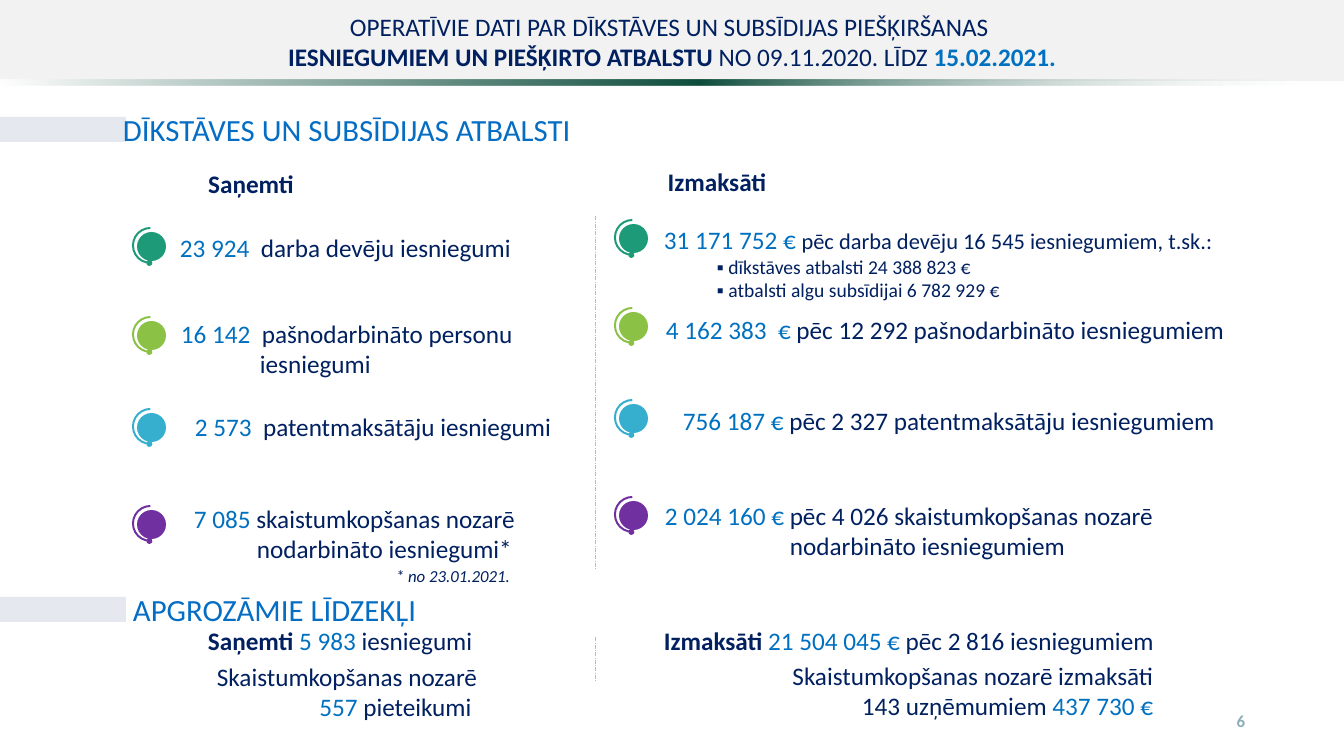
from lxml import etree
from pptx import Presentation
from pptx.dml.color import RGBColor
from pptx.enum.dml import MSO_LINE
from pptx.enum.shapes import MSO_CONNECTOR, MSO_SHAPE
from pptx.enum.text import MSO_ANCHOR, PP_ALIGN
from pptx.oxml import parse_xml
from pptx.oxml.ns import qn
from pptx.util import Pt

RECT, WAVE, ARC, OVAL = MSO_SHAPE.RECTANGLE, MSO_SHAPE.WAVE, MSO_SHAPE.ARC, MSO_SHAPE.OVAL
LEFT, MID, RIGHT = PP_ALIGN.LEFT, PP_ALIGN.CENTER, PP_ALIGN.RIGHT
STRAIGHT, DASH = MSO_CONNECTOR.STRAIGHT, MSO_LINE.LONG_DASH_DOT
MIDDLE = MSO_ANCHOR.MIDDLE

NAVY = RGBColor(0x00, 0x20, 0x60)
BLUE = RGBColor(0x00, 0x70, 0xC0)
AZURE = RGBColor(0x05, 0x6E, 0xC4)
GREY = RGBColor(0xF2, 0xF2, 0xF2)
PALE = RGBColor(0xE5, 0xE8, 0xEF)
SLATE = RGBColor(0x8C, 0xAE, 0xBB)
CYAN = RGBColor(0x4E, 0xE6, 0xFF)
GREEN = RGBColor(0x1D, 0x9A, 0x78)
LIME = RGBColor(0x8B, 0xC1, 0x45)
SKY = RGBColor(0x36, 0xAF, 0xCE)
PLUM = RGBColor(0x70, 0x30, 0xA0)

PX = 914400 / 70.9
WIDE, HIGH = 1344, 756
FONT = "Calibri"

STYLES = {
    "text": (25.6, NAVY, False, False),
    "bold": (25.6, NAVY, True, False),
    "num": (25.6, BLUE, False, False),
    "date": (25.6, BLUE, True, False),
    "less": (22.8, NAVY, False, False),
    "item": (19.9, NAVY, False, False),
    "head": (31.3, AZURE, False, False),
    "note": (17.1, NAVY, False, True),
    "page": (17.1, SLATE, True, False),
}

TITLE = [
    (0, 8, WIDE, 68, MID, [
        (0, [("OPERATĪVIE DATI PAR DĪKSTĀVES UN SUBSĪDIJAS PIEŠĶIRŠANAS ", "text")]),
        (0, [("IESNIEGUMIEM UN PIEŠĶIRTO ATBALSTU ", "bold"),
             ("NO 09.11.2020. LĪDZ ", "text"), ("15.02.2021.", "date")])]),
    (116, 107, 626, 45, LEFT, [(0, [("DĪKSTĀVES UN SUBSĪDIJAS ATBALSTI", "head")])]),
    (126, 587, 670, 45, LEFT, [(0, [("APGROZĀMIE LĪDZEKĻI", "head")])]),
]
CLAIMS = [
    (126, 165, 250, 38, MID, [(0, [("Saņemti", "bold")])]),
    (173, 229, 400, 38, LEFT, [
        (0, [("23 924  ", "num"), ("darba devēju iesniegumi", "text")])]),
    (174, 315, 400, 68, LEFT, [
        (0, [("16 142  ", "num"), ("pašnodarbināto personu", "text")]),
        (79, [("iesniegumi", "text")])]),
    (188, 408, 400, 38, LEFT, [
        (0, [("2 573  ", "num"), ("patentmaksātāju iesniegumi", "text")])]),
    (187, 500, 400, 68, LEFT, [
        (0, [("7 085 ", "num"), ("skaistumkopšanas nozarē", "text")]),
        (63, [("nodarbināto iesniegumi*", "text")])]),
    (389, 562, 160, 28, LEFT, [(0, [("* no 23.01.2021.", "note")])]),
]
PAID = [
    (415, 163, 604, 38, MID, [(0, [("Izmaksāti", "bold")])]),
    (657, 221, 670, 85, LEFT, [
        (0, [("31 171 752 € ", "num"),
             ("pēc darba devēju 16 545 iesniegumiem, t.sk.:", "less")]),
        (53, [("▪ dīkstāves atbalsti 24 388 823 €", "item")]),
        (53, [("▪ atbalsti algu subsīdijai 6 782 929 €", "item")])]),
    (659, 311, 603, 38, LEFT, [
        (0, [("4 162 383  €", "num"),
             (" pēc 12 292 pašnodarbināto iesniegumiem", "text")])]),
    (676, 402, 570, 38, LEFT, [
        (0, [("756 187 € ", "num"), ("pēc 2 327 patentmaksātāju iesniegumiem", "text")])]),
    (658, 497, 570, 68, LEFT, [
        (0, [("2 024 160 € ", "num"), ("pēc 4 026 skaistumkopšanas nozarē", "text")]),
        (125, [("nodarbināto iesniegumiem", "text")])]),
]
FUNDS = [
    (201, 622, 425, 38, LEFT, [
        (0, [("Saņemti ", "bold"), ("5 983 ", "num"), ("iesniegumi", "text")])]),
    (657, 622, 580, 38, LEFT, [
        (0, [("Izmaksāti ", "bold"), ("21 504 045 € ", "num"),
             ("pēc 2 816 iesniegumiem", "text")])]),
    (201, 658, 283, 68, RIGHT, [
        (0, [("Skaistumkopšanas nozarē", "text")]),
        (0, [("557", "num"), (" pieteikumi ", "text")])]),
    (586, 657, 574, 68, RIGHT, [
        (0, [("Skaistumkopšanas nozarē izmaksāti", "text")]),
        (0, [("143 uzņēmumiem ", "text"), ("437 730 €", "num")])]),
]
PAGE = (1192, 701, 60, 40, RIGHT, [(0, [("6", "page")])])

HUES = [GREEN, LIME, SKY, PLUM]
ICONS = [(133, [228, 317, 409, 506]), (615, [220, 308, 400, 497])]
RING, DOT, GAP = 35, 29, 4
RULES = [(216, 569), (637, 681)]
TABS = [117, 597]

FADE = """<a:gradFill xmlns:a="http://schemas.openxmlformats.org/drawingml/2006/main"><a:gsLst>
<a:gs pos="0"><a:srgbClr val="FFFFFF"/></a:gs>
<a:gs pos="52000"><a:srgbClr val="0E4D3C"/></a:gs>
<a:gs pos="100000"><a:srgbClr val="FFFFFF"><a:alpha val="0"/></a:srgbClr></a:gs>
</a:gsLst><a:lin ang="0" scaled="0"/></a:gradFill>"""


def emu(*vals):
    return [round(v * PX) for v in vals]


def shape(host, kind, box, fill=None):
    item = host.shapes.add_shape(kind, *emu(*box))
    item.shadow.inherit = False
    item.line.fill.background()
    if fill is None:
        item.fill.background()
    else:
        item.fill.solid()
        item.fill.fore_color.rgb = fill
    return item


def text(slide, x, y, w, h, align, paras):
    frame = slide.shapes.add_textbox(*emu(x, y, w, h)).text_frame
    frame.word_wrap = True
    for i, (indent, runs) in enumerate(paras):
        para = frame.add_paragraph() if i else frame.paragraphs[0]
        para.alignment = align
        if indent:
            para._p.get_or_add_pPr().set("marL", str(emu(indent)[0]))
        for words, style in runs:
            run = para.add_run()
            run.text = words
            font = run.font
            size, font.color.rgb, font.bold, font.italic = STYLES[style]
            font.size = Pt(size)
            font.name = FONT
    return frame


def icon(slide, x, y, hue):
    group = slide.shapes.add_group_shape()
    ring = shape(group, ARC, (x, y, RING, RING))
    ring.adjustments[0], ring.adjustments[1] = 56.14, 161.74
    ring.line.color.rgb = hue
    ring.line.width = Pt(2)
    etree.SubElement(ring.line._get_or_add_ln(), qn("a:headEnd"), type="oval")
    shape(group, OVAL, (x + GAP, y + GAP, DOT, DOT), hue)


def rule(slide, x, top, end):
    line = slide.shapes.add_connector(STRAIGHT, *emu(x, top, x, end))
    line.line.color.rgb = CYAN
    line.line.width = Pt(0.5)
    line.line.dash_style = DASH
    etree.SubElement(line._element.spPr, qn("a:effectLst"))


def main():
    deck = Presentation()
    deck.slide_width, deck.slide_height = emu(WIDE, HIGH)
    slide = deck.slides.add_slide(deck.slide_layouts[6])
    shape(slide, RECT, (0, 0, WIDE, 81), GREY)
    band = shape(slide, WAVE, (1, 80, WIDE - 2, 5))
    band.adjustments[0] = band.adjustments[1] = 0
    props = band._element.spPr
    props.replace(props.find(qn("a:noFill")), parse_xml(FADE))
    for y in TABS:
        shape(slide, RECT, (0, y, 126, 25), PALE)
    for top, end in RULES:
        rule(slide, 595, top, end)
    for x, tops in ICONS:
        for y, hue in zip(tops, HUES):
            icon(slide, x, y, hue)
    for box in TITLE + CLAIMS + PAID + FUNDS:
        text(slide, *box)
    text(slide, *PAGE).vertical_anchor = MIDDLE
    deck.save("out.pptx")


if __name__ == "__main__":
    main()
